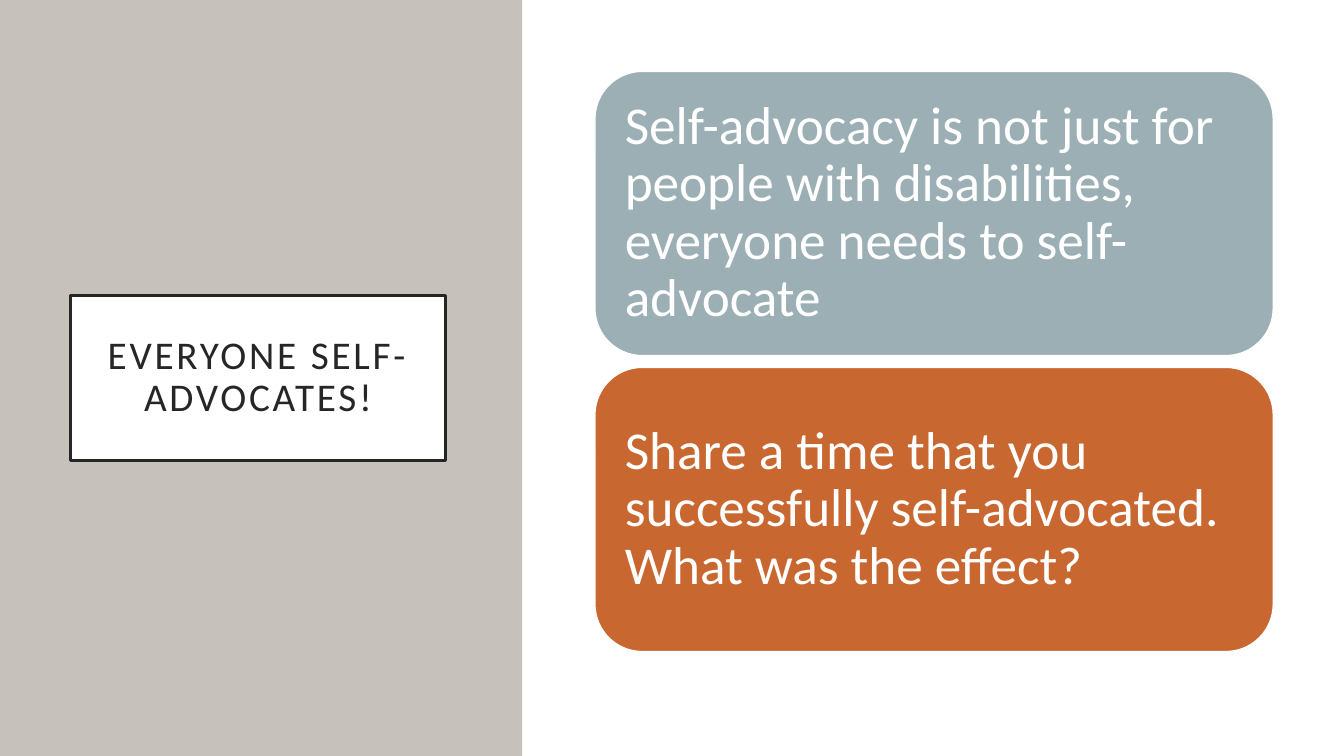
import pptx
import pptx.dml.color
import pptx.enum.shapes
import pptx.enum.text
import pptx.util

Pt = pptx.util.Pt
SHAPES = pptx.enum.shapes.MSO_SHAPE
ALIGN = pptx.enum.text.PP_ALIGN


def color(hex_string):
    return pptx.dml.color.RGBColor.from_string(hex_string)


class SlideBuilder:
    font = "Calibri"
    ink = "262626"
    white = "FFFFFF"

    def __init__(self, page):
        self.page = page

    def paint(self, shape, fill, line=None, width=1):
        shape.fill.solid()
        shape.fill.fore_color.rgb = color(fill)
        if line:
            shape.line.color.rgb = color(line)
            shape.line.width = Pt(width)
        else:
            shape.line.fill.background()

    def set_text(self, shape, text, size, ink, align, inset, tracking=0):
        frame = shape.text_frame
        frame.text = text
        frame.word_wrap = True
        frame.auto_size = pptx.enum.text.MSO_AUTO_SIZE.NONE
        frame.vertical_anchor = pptx.enum.text.MSO_ANCHOR.MIDDLE
        frame.margin_left = frame.margin_right = Pt(inset)
        frame.margin_top = frame.margin_bottom = Pt(inset)
        para = frame.paragraphs[0]
        para.alignment = align
        para.line_spacing = 0.9
        span = para.runs[0]
        span.font.name = self.font
        span.font.size = Pt(size)
        span.font.color.rgb = color(ink)
        if tracking:
            span.font._element.set("spc", str(tracking * 100))

    def shape(self, kind, left, top, width, height, fill, line=None):
        shape = self.page.shapes.add_shape(
            kind, Pt(left), Pt(top), Pt(width), Pt(height))
        shape.shadow.inherit = False
        self.paint(shape, fill, line)
        return shape

    def panel(self, left, width, fill):
        panel = self.shape(SHAPES.RECTANGLE, left, 0, width, 540, fill)
        self.page.shapes.title.element.addprevious(panel.element)

    def title(self, text, left, top, width, height):
        title = self.page.shapes.title
        title.left, title.top = Pt(left), Pt(top)
        title.width, title.height = Pt(width), Pt(height)
        self.paint(title, self.white, self.ink, 2.5)
        self.set_text(title, text, 28, self.ink, ALIGN.CENTER, 14.4, tracking=2)

    def card(self, text, left, top, width, height, fill):
        card = self.shape(SHAPES.ROUNDED_RECTANGLE,
                          left, top, width, height, fill, self.white)
        self.set_text(card, text, 38, self.white, ALIGN.LEFT, 11.4)


def main():
    deck = pptx.Presentation()
    deck.slide_width, deck.slide_height = Pt(960), Pt(540)
    page = deck.slides.add_slide(deck.slide_layouts[5])
    builder = SlideBuilder(page)

    builder.panel(0, 373, "C6C1BA")
    builder.panel(374, 586, builder.white)
    builder.title("EVERYONE SELF-ADVOCATES!", 50.4, 211, 268, 118)

    cards = [
        ("Self-advocacy is not just for people with disabilities, "
         "everyone needs to self-advocate", "9BAFB5"),
        ("Share a time that you successfully self-advocated. "
         "What was the effect?", "C96731"),
    ]
    height, gap = 203, 8.4
    for index, (text, fill) in enumerate(cards):
        top = 51 + index * (height + gap)
        builder.card(text, 425, top, 484.5, height, fill)

    deck.save("out.pptx")


if __name__ == "__main__":
    main()
